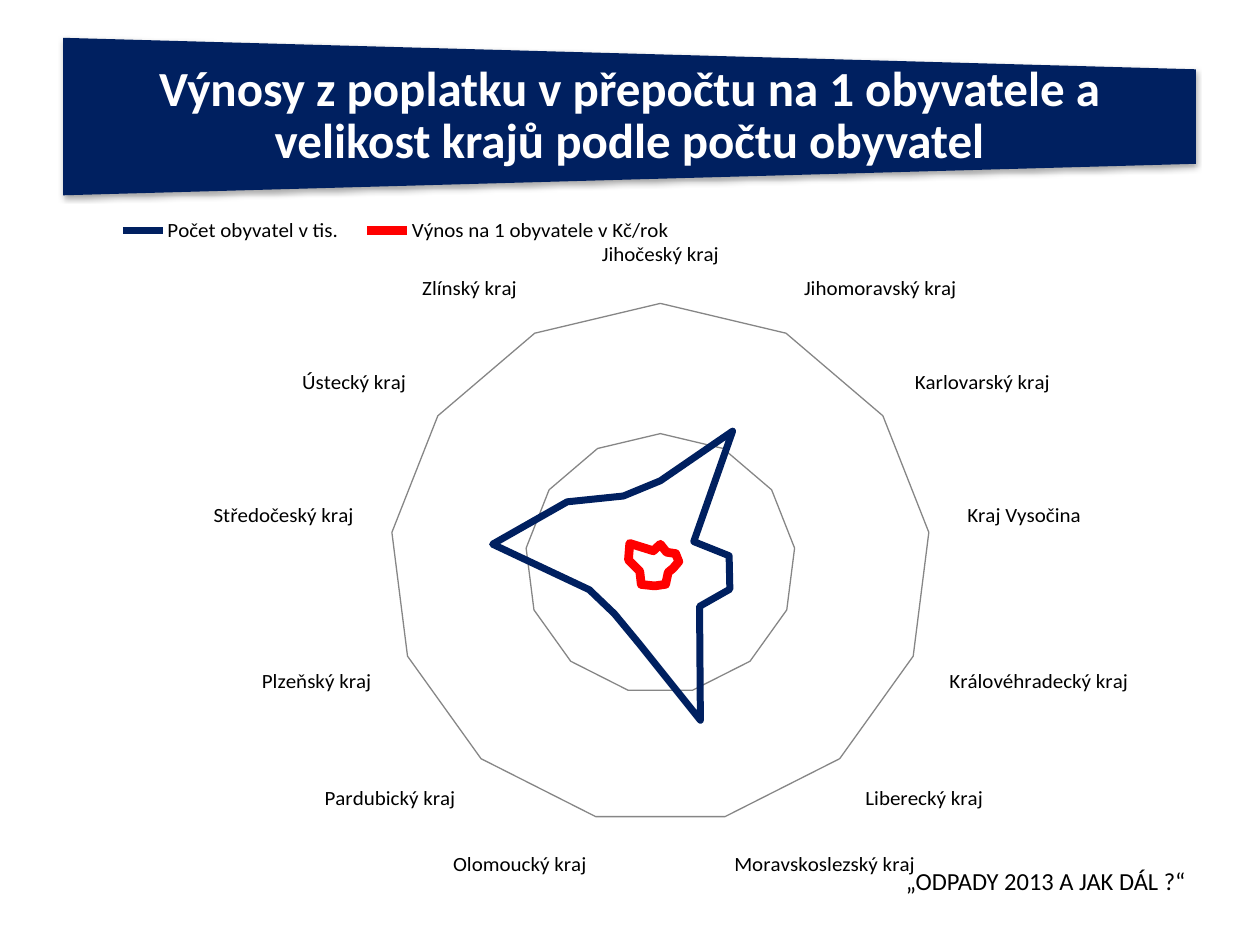
from lxml import etree
from pptx import Presentation
from pptx.chart.data import CategoryChartData
from pptx.dml.color import RGBColor
from pptx.enum.chart import XL_CHART_TYPE as ChartType
from pptx.enum.chart import XL_LEGEND_POSITION as LegendPosition
from pptx.enum.chart import XL_MARKER_STYLE as MarkerStyle
from pptx.enum.shapes import MSO_SHAPE as Shape
from pptx.enum.text import MSO_ANCHOR as Anchor
from pptx.enum.text import PP_ALIGN as Align
from pptx.oxml import parse_xml
from pptx.oxml.ns import nsdecls, qn
from pptx.util import Inches, Pt

FONT = "Calibri"
COLORS = {"navy": "002060", "red": "FF0000", "black": "000000",
          "white": "FFFFFF", "grid": "868686"}
REGIONS = ["Jihočeský kraj", "Jihomoravský kraj", "Karlovarský kraj",
           "Kraj Vysočina", "Královéhradecký kraj", "Liberecký kraj",
           "Moravskoslezský kraj", "Olomoucký kraj", "Pardubický kraj",
           "Plzeňský kraj", "Středočeský kraj", "Ústecký kraj",
           "Zlínský kraj"]
SERIES = [
    ("Počet obyvatel v tis.", "navy", 4,
     [51, 92, 24, 41, 44, 35, 99, 51, 41, 45, 100, 67, 47]),
    ("Výnos na 1 obyvatele v Kč/rok", "red", 5,
     [12, 8, 11, 11, 8, 7, 13, 14, 17, 13, 19, 22, 9]),
]


def rgb(name):
    """Return the named colour."""
    return RGBColor.from_string(COLORS[name])


def add_text(shapes, text, left, top, width, height, size=14, color="black",
             bold=False, align=Align.LEFT, anchor=Anchor.TOP,
             line_spacing=None, side_inset=0.1, end_inset=0.05):
    """Add a wrapped text box, with lengths in inches."""
    box = shapes.add_textbox(Inches(left), Inches(top),
                             Inches(width), Inches(height))
    frame = box.text_frame
    frame.word_wrap = True
    frame.vertical_anchor = anchor
    frame.margin_left = frame.margin_right = Inches(side_inset)
    frame.margin_top = frame.margin_bottom = Inches(end_inset)
    paragraph = frame.paragraphs[0]
    paragraph.alignment = align
    paragraph.line_spacing = line_spacing
    run = paragraph.add_run()
    run.text = text
    run.font.name = FONT
    run.font.size = Pt(size)
    run.font.bold = bold
    run.font.color.rgb = rgb(color)
    return box


def add_shadow(shape):
    """Give a shape a soft shadow that falls straight down."""
    shape.shadow.inherit = False
    effects = shape._element.spPr.find(qn("a:effectLst"))
    effects.append(parse_xml(
        f'<a:outerShdw {nsdecls("a")} blurRad="{Pt(3.1)}" dist="{Pt(1.8)}" '
        'dir="5400000" rotWithShape="0">'
        f'<a:srgbClr val="{COLORS["black"]}"><a:alpha val="35000"/>'
        '</a:srgbClr></a:outerShdw>'))


def add_banner(slide, title, left, top, width, height):
    """Draw the tapered title banner in the given box."""
    group = slide.shapes.add_group_shape()
    banner = group.shapes.add_shape(
        Shape.FLOWCHART_MANUAL_OPERATION,
        Inches(left + (width - height) / 2),
        Inches(top + (height - width) / 2), Inches(height), Inches(width))
    banner.rotation = 270
    banner.fill.solid()
    banner.fill.fore_color.rgb = rgb("navy")
    banner.line.fill.background()
    add_shadow(banner)
    add_text(group.shapes, title, left, top + height / 5, width,
             height * 3 / 5, size=28, color="white", bold=True,
             align=Align.CENTER, anchor=Anchor.MIDDLE, line_spacing=0.9,
             side_inset=0.19, end_inset=0)


def set_layout(element, index, x, y, w, h, inner=False):
    """Place a chart part by fractions of the chart's size."""
    for layout in element.findall(qn("c:layout")):
        element.remove(layout)
    layout = parse_xml(f'<c:layout {nsdecls("c")}/>')
    manual = etree.SubElement(layout, qn("c:manualLayout"))
    settings = [("layoutTarget", "inner")] if inner else []
    settings += [("xMode", "edge"), ("yMode", "edge"),
                 ("x", x), ("y", y), ("w", w), ("h", h)]
    for tag, value in settings:
        etree.SubElement(manual, qn(f"c:{tag}")).set("val", str(value))
    element.insert(index, layout)


def add_radar(slide, left, top, width, height):
    """Draw the radar chart of the regions in the given box."""
    data = CategoryChartData()
    data.categories = REGIONS
    for name, _, _, values in SERIES:
        data.add_series(name, values)
    chart = slide.shapes.add_chart(
        ChartType.RADAR, Inches(left), Inches(top),
        Inches(width), Inches(height), data).chart
    chart.has_title = False
    chart.font.name = FONT
    chart.font.size = Pt(12)
    chart.font.color.rgb = rgb("black")
    chart.has_legend = True
    chart.legend.position = LegendPosition.TOP
    chart.legend.include_in_layout = True
    set_layout(chart.legend._element, 1, 0.05, 0, 0.52, 0.05)
    set_layout(chart._chartSpace.chart.plotArea, 0,
               0.305, 0.109, 0.477, 0.878, inner=True)

    axis = chart.value_axis
    axis.minimum_scale, axis.maximum_scale, axis.major_unit = 0, 160, 80
    axis.has_major_gridlines = True
    axis.major_gridlines.format.line.color.rgb = rgb("grid")
    axis.major_gridlines.format.line.width = Pt(0.75)
    axis.visible = False

    plot = chart.plots[0]
    plot.vary_by_categories = False
    for series, (_, color, line_width, _) in zip(plot.series, SERIES):
        series.marker.style = MarkerStyle.NONE
        series.smooth = False
        series.format.line.color.rgb = rgb(color)
        series.format.line.width = Pt(line_width)


def main():
    """Build the slide and save it."""
    presentation = Presentation()
    presentation.slide_width = Inches(10)
    presentation.slide_height = Inches(7.5)
    slide = presentation.slides.add_slide(presentation.slide_layouts[6])
    add_text(slide.shapes, "„ODPADY 2013 A JAK DÁL ?“",
             6.34, 6.82, 3.17, 0.52, align=Align.RIGHT)
    add_banner(slide, "Výnosy z poplatku v přepočtu na 1 obyvatele a "
               "velikost krajů podle počtu obyvatel", 0.5, 0.3, 8.99, 1.25)
    add_radar(slide, 0.35, 1.7, 9, 5.26)
    presentation.save("out.pptx")


if __name__ == "__main__":
    main()
